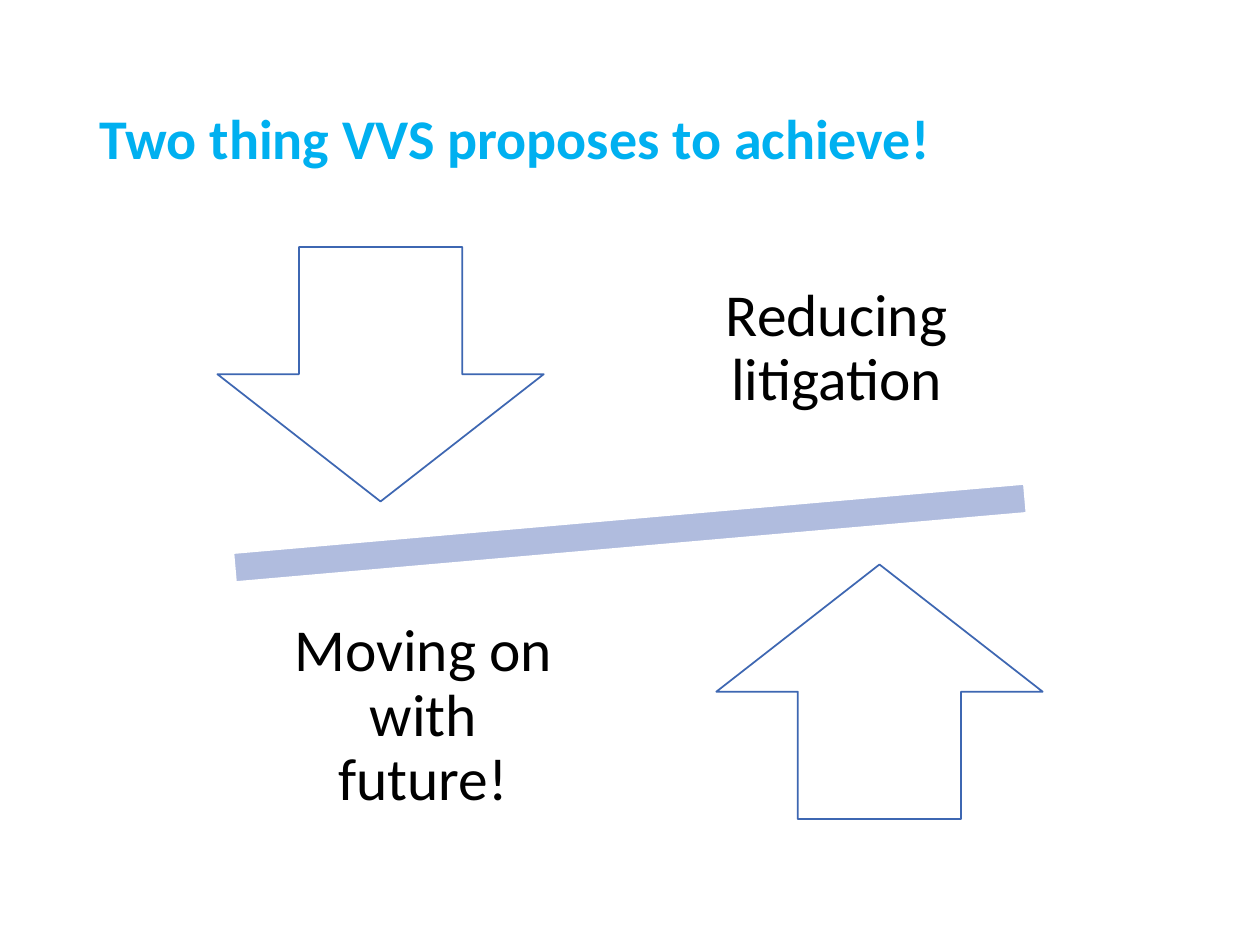
from pptx import Presentation
from pptx.dml.color import RGBColor
from pptx.enum.shapes import MSO_SHAPE
from pptx.enum.text import MSO_ANCHOR, MSO_AUTO_SIZE, PP_ALIGN
from pptx.util import Inches, Pt

DOWN, UP, MINUS = MSO_SHAPE.DOWN_ARROW, MSO_SHAPE.UP_ARROW, MSO_SHAPE.MATH_MINUS
MIDDLE = MSO_ANCHOR.MIDDLE
LEFT, CENTER = PP_ALIGN.LEFT, PP_ALIGN.CENTER
NO_AUTOFIT = MSO_AUTO_SIZE.NONE

WHITE = RGBColor(0xFF, 0xFF, 0xFF)
BLACK = RGBColor(0x00, 0x00, 0x00)
SKY = RGBColor(0x00, 0xB0, 0xF0)
BLUE = RGBColor(0x3E, 0x67, 0xB2)
LAVENDER = RGBColor(0xB0, 0xBC, 0xDE)

WIDTH, HEIGHT = 10, 7.5
TITLE_ONLY = 5


class BalanceSlide:
    """Places elements by centre and size, both in inches on the slide."""

    font = "Calibri"
    line_spacing = 0.9
    inset = Inches(0.26)

    def __init__(self, deck):
        self.slide = deck.slides.add_slide(deck.slide_layouts[TITLE_ONLY])

    def frame(self, center, size):
        """Turn a centre and a size into left, top, width and height."""
        corner = [middle - length / 2 for middle, length in zip(center, size)]
        return [Inches(value) for value in (*corner, *size)]

    def set_text(self, box, text, size, color, align, bold=False):
        text_frame = box.text_frame
        text_frame.word_wrap = True
        text_frame.auto_size = NO_AUTOFIT
        text_frame.vertical_anchor = MIDDLE
        para = text_frame.paragraphs[0]
        para.text = text
        para.alignment = align
        para.line_spacing = self.line_spacing
        para.font.name = self.font
        para.font.size = Pt(size)
        para.font.bold = bold
        para.font.color.rgb = color

    def title(self, text, center, size):
        title = self.slide.shapes.title
        title.left, title.top, title.width, title.height = self.frame(center, size)
        self.set_text(title, text, 32, SKY, LEFT, bold=True)

    def shape(self, kind, center, size, fill, line, rotation=0):
        shape = self.slide.shapes.add_shape(kind, *self.frame(center, size))
        shape.shadow.inherit = False
        shape.fill.solid()
        shape.fill.fore_color.rgb = fill
        shape.line.color.rgb = line
        shape.line.width = Pt(1)
        shape.rotation = rotation

    def label(self, text, center, size):
        box = self.slide.shapes.add_textbox(*self.frame(center, size))
        text_frame = box.text_frame
        text_frame.margin_left = text_frame.margin_right = self.inset
        text_frame.margin_top = text_frame.margin_bottom = self.inset
        self.set_text(box, text, 34, BLACK, CENTER)


def main():
    deck = Presentation()
    deck.slide_width, deck.slide_height = Inches(WIDTH), Inches(HEIGHT)
    page = BalanceSlide(deck)
    page.title("Two thing VVS proposes to achieve!", (WIDTH / 2, 1.12), (8.62, 1.45))

    # Arrows and labels mirror each other through the middle of the bar.
    pivot_x, pivot_y = WIDTH / 2, 4.23
    page.shape(MINUS, (pivot_x, pivot_y), (8.57, 0.98), LAVENDER, WHITE, rotation=355)
    sides = (
        (-1, DOWN, "Reducing litigation"),
        (1, UP, "Moving on with future!"),
    )
    for side, arrow, text in sides:
        arrow_center = (pivot_x + side * 1.98, pivot_y + side * 1.26)
        label_center = (pivot_x - side * 1.64, pivot_y + side * 1.46)
        page.shape(arrow, arrow_center, (2.59, 2.02), WHITE, BLUE)
        page.label(text, label_center, (2.76, 2.12))

    deck.save("out.pptx")


if __name__ == "__main__":
    main()
